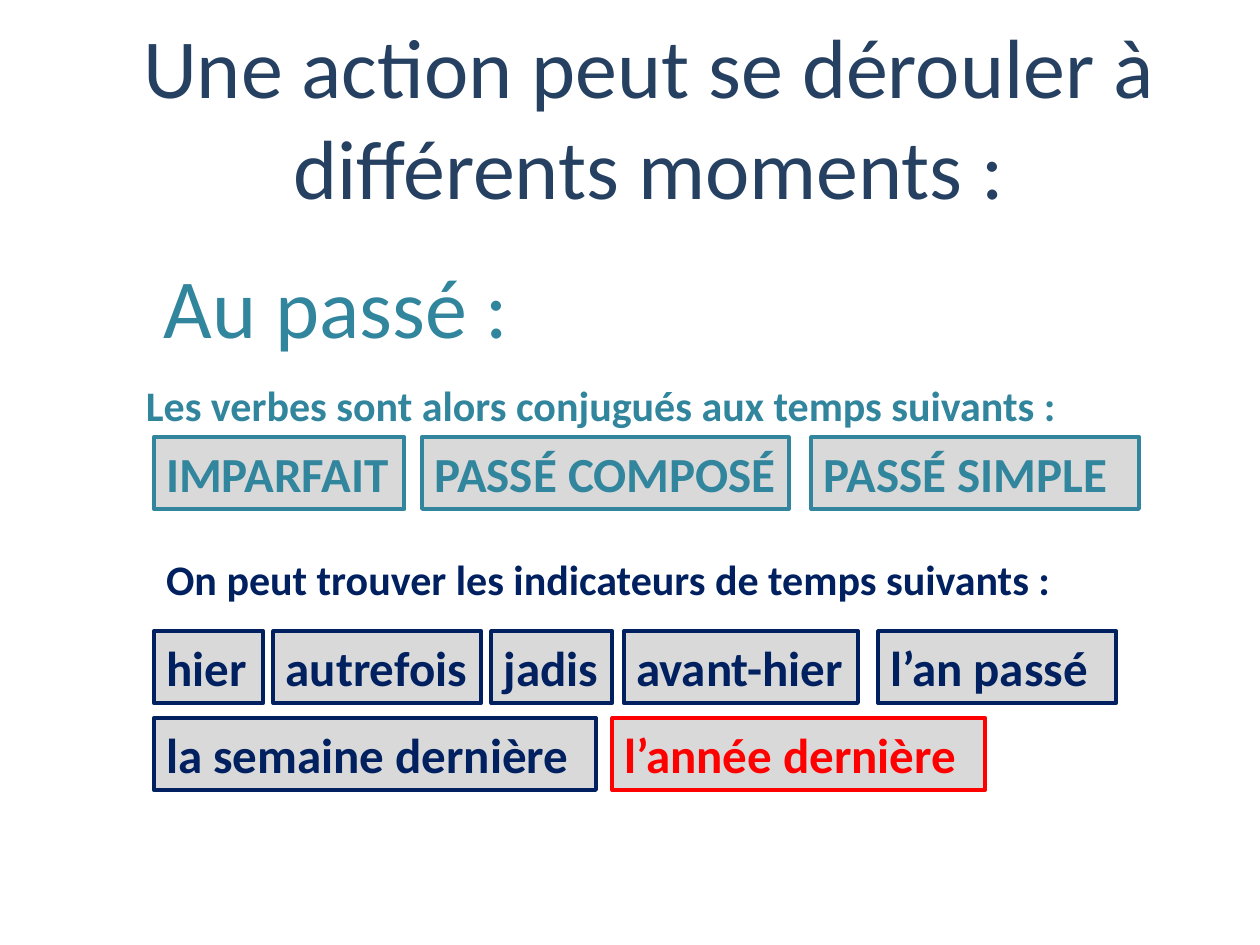
from pptx import Presentation
from pptx.dml.color import RGBColor
from pptx.enum.shapes import MSO_SHAPE
from pptx.enum.text import MSO_ANCHOR, PP_ALIGN
from pptx.util import Inches, Pt

RECT = MSO_SHAPE.RECTANGLE
TOP, MIDDLE = MSO_ANCHOR.TOP, MSO_ANCHOR.MIDDLE
LEFT, CENTER = PP_ALIGN.LEFT, PP_ALIGN.CENTER

DARK = RGBColor(0x25, 0x40, 0x61)
TEAL = RGBColor(0x31, 0x85, 0x9C)
NAVY = RGBColor(0x00, 0x20, 0x60)
RED = RGBColor(0xFF, 0x00, 0x00)
GREY = RGBColor(0xD9, 0xD9, 0xD9)

FONT = "Calibri"
MARGIN = 1.22
TAG_HIGH = 0.57

# text, box (left, top, width, height), size, color, bold, align, anchor
HEADS = [
    ("Une action peut se dérouler à différents moments :",
     (0.65, 0.29, 9, 1.25), 48, DARK, False, CENTER, MIDDLE),
    ("Au passé :", (1.2, 1.97, 6.61, 0.91), 48, TEAL, False, LEFT, TOP),
    ("Les verbes sont alors conjugués aux temps suivants :",
     (1.06, 2.96, 8.3, 0.5), 24, TEAL, True, LEFT, TOP),
    ("On peut trouver les indicateurs de temps suivants :",
     (MARGIN, 4.34, 8.3, 0.5), 24, NAVY, True, LEFT, TOP),
]

# row top, then tags: text, width, gap to the next tag, color
ROWS = [
    (3.47, [("IMPARFAIT", 1.99, 0.14, TEAL),
            ("PASSÉ COMPOSÉ", 2.91, 0.18, TEAL),
            ("PASSÉ SIMPLE", 2.6, 0, TEAL)]),
    (5.01, [("hier", 0.87, 0.08, NAVY),
            ("autrefois", 1.65, 0.08, NAVY),
            ("jadis", 0.96, 0.09, NAVY),
            ("avant-hier", 1.86, 0.16, NAVY),
            ("l’an passé", 1.89, 0, NAVY)]),
    (5.7, [("la semaine dernière", 3.51, 0.13, NAVY),
           ("l’année dernière", 2.96, 0, RED)]),
]


def write(shape, text, size, color, bold, align=LEFT, anchor=TOP):
    frame = shape.text_frame
    frame.word_wrap = True
    frame.vertical_anchor = anchor
    para = frame.paragraphs[0]
    para.alignment = align
    run = para.add_run()
    run.text = text
    font = run.font
    font.name, font.size, font.bold = FONT, Pt(size), bold
    font.color.rgb = color


def add_tag(slide, text, left, top, width, color):
    box = map(Inches, (left, top, width, TAG_HIGH))
    tag = slide.shapes.add_shape(RECT, *box)
    tag.shadow.inherit = False
    tag.fill.solid()
    tag.fill.fore_color.rgb = GREY
    tag.line.color.rgb = color
    tag.line.width = Pt(2.25)
    tag.text_frame.margin_right = 0
    write(tag, text, 28, color, True)


def main():
    deck = Presentation()
    deck.slide_width, deck.slide_height = Inches(10), Inches(7.5)
    slide = deck.slides.add_slide(deck.slide_layouts[6])
    for text, box, *style in HEADS:
        write(slide.shapes.add_textbox(*map(Inches, box)), text, *style)
    for top, tags in ROWS:
        left = MARGIN
        for text, width, gap, color in tags:
            add_tag(slide, text, left, top, width, color)
            left += width + gap
    deck.save("out.pptx")


if __name__ == "__main__":
    main()
